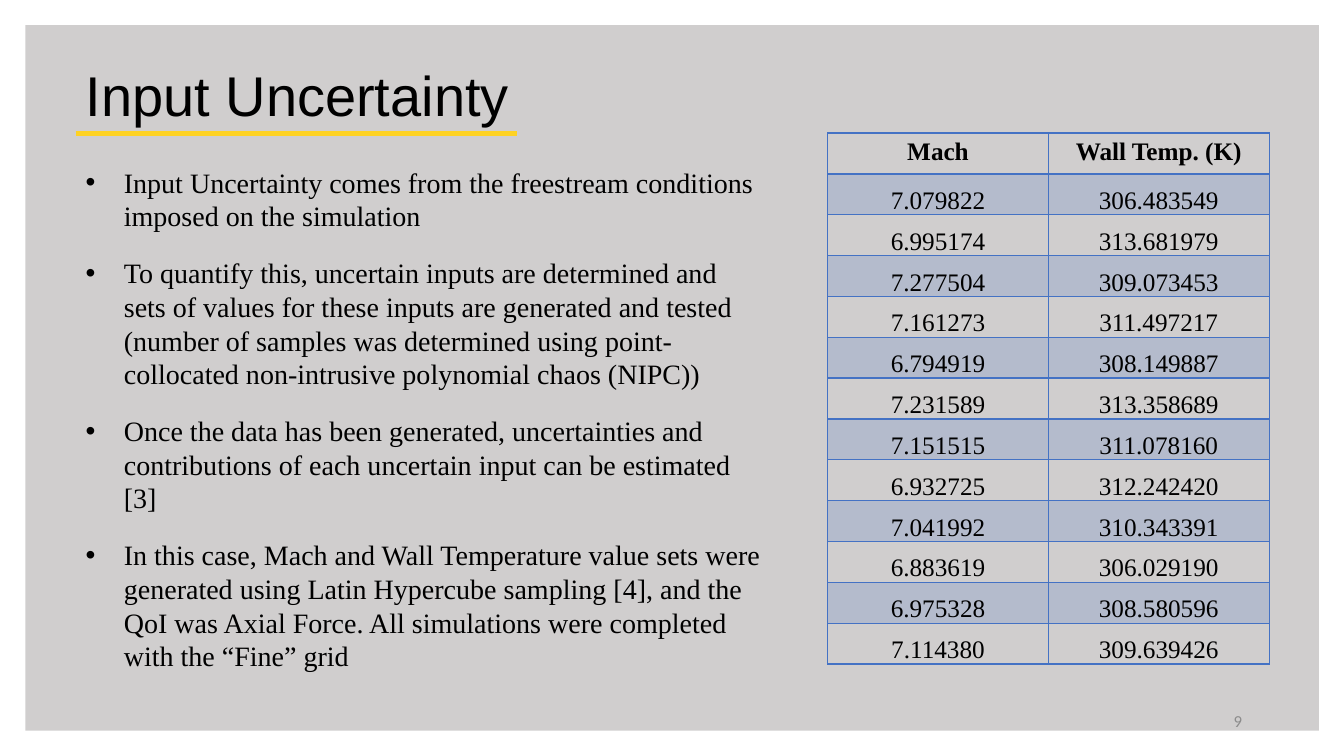
from dataclasses import dataclass

from lxml.etree import SubElement
from pptx import Presentation
from pptx.dml.color import RGBColor
from pptx.enum.shapes import MSO_CONNECTOR, MSO_SHAPE
from pptx.enum.text import MSO_ANCHOR, PP_ALIGN
from pptx.oxml import parse_xml
from pptx.oxml.ns import nsdecls, qn
from pptx.util import Inches, Pt

SLIDE_W, SLIDE_H = Inches(13.33), Inches(7.5)


@dataclass(frozen=True)
class Theme:
    panel: str = "D0CECE"
    ink: str = "000000"
    rule: str = "FED223"
    accent: str = "4472C4"
    muted: str = "8C8C8C"
    title_font: str = "Arial"
    body_font: str = "Times New Roman"
    number_font: str = "Calibri"
    title_size: int = 40
    body_size: int = 20
    table_size: int = 18
    number_size: int = 12


THEME = Theme()

BULLETS = [
    "Input Uncertainty comes from the freestream conditions imposed on the simulation",
    "To quantify this, uncertain inputs are determined and sets of values for these "
    "inputs are generated and tested (number of samples was determined using "
    "point-collocated non-intrusive polynomial chaos (NIPC))",
    "Once the data has been generated, uncertainties and contributions of each "
    "uncertain input can be estimated [3]",
    "In this case, Mach and Wall Temperature value sets were generated using Latin "
    "Hypercube sampling [4], and the QoI was Axial Force. All simulations were "
    "completed with the “Fine” grid",
]

HEADER = ("Mach", "Wall Temp. (K)")
SAMPLES = [
    ("7.079822", "306.483549"),
    ("6.995174", "313.681979"),
    ("7.277504", "309.073453"),
    ("7.161273", "311.497217"),
    ("6.794919", "308.149887"),
    ("7.231589", "313.358689"),
    ("7.151515", "311.078160"),
    ("6.932725", "312.242420"),
    ("7.041992", "310.343391"),
    ("6.883619", "306.029190"),
    ("6.975328", "308.580596"),
    ("7.114380", "309.639426"),
]


def box(x, y, w, h):
    """Turn percentages of the slide into left, top, width and height."""
    return (int(SLIDE_W * x / 100), int(SLIDE_H * y / 100),
            int(SLIDE_W * w / 100), int(SLIDE_H * h / 100))


def style(p, font, size, color, align=PP_ALIGN.LEFT, bold=False):
    p.alignment = align
    p.font.name, p.font.size, p.font.bold = font, Pt(size), bold
    p.font.color.rgb = RGBColor.from_string(color)


def add_panel(slide, area):
    sp = slide.shapes.add_shape(MSO_SHAPE.RECTANGLE, *area)
    sp.shadow.inherit = False
    sp.fill.solid()
    sp.fill.fore_color.rgb = RGBColor.from_string(THEME.panel)
    sp.line.fill.background()
    # Send behind the title placeholder
    slide.shapes._spTree.insert(2, sp._element)


def add_title(slide, area, text, rule_width, rule_drop):
    title = slide.shapes.title
    title.left, title.top, title.width, title.height = area
    tf = title.text_frame
    tf.text = text
    tf.vertical_anchor = MSO_ANCHOR.MIDDLE
    p = tf.paragraphs[0]
    p.line_spacing = 0.9
    style(p, THEME.title_font, THEME.title_size, THEME.ink)

    # Yellow underline
    left, top, width, height = area
    y = top + int(height * rule_drop)
    line = slide.shapes.add_connector(
        MSO_CONNECTOR.STRAIGHT, left, y, left + int(width * rule_width), y)
    line.line.color.rgb = RGBColor.from_string(THEME.rule)
    line.line.width = Pt(3.25)
    SubElement(line._element.spPr, qn("a:effectLst"))


def add_bullets(slide, area, items):
    tf = slide.shapes.add_textbox(*area).text_frame
    tf.word_wrap = True
    indent = Inches(0.38)
    for i, item in enumerate(items):
        p = tf.paragraphs[0] if i == 0 else tf.add_paragraph()
        p.text = item
        style(p, THEME.body_font, THEME.body_size, THEME.ink)
        p.line_spacing = Pt(24)
        p.space_before = Pt(16.7 if i else 0)
        pPr = p._p.get_or_add_pPr()
        pPr.set("marL", str(indent))
        pPr.set("indent", str(-indent))
        bullet_font = parse_xml(f'<a:buFont {nsdecls("a")} typeface="Arial"/>')
        bullet = parse_xml(f'<a:buChar {nsdecls("a")} char="•"/>')
        pPr.insert_element_before(bullet_font, "a:defRPr")
        pPr.insert_element_before(bullet, "a:defRPr")


def set_borders(cell, top=1, bottom=1):
    tcPr = cell._tc.get_or_add_tcPr()
    widths = {"lnL": 1, "lnR": 1, "lnT": top, "lnB": bottom}
    for i, (side, width) in enumerate(widths.items()):
        tcPr.insert(i, parse_xml(
            f'<a:{side} {nsdecls("a")} w="{Pt(width)}"><a:solidFill>'
            f'<a:srgbClr val="{THEME.accent}"/></a:solidFill></a:{side}>'))


def fill_cell(cell, banded):
    if not banded:
        cell.fill.background()
        return
    cell.fill.solid()
    cell.fill.fore_color.rgb = RGBColor.from_string(THEME.accent)
    color = cell._tc.tcPr.find(".//" + qn("a:srgbClr"))
    SubElement(color, qn("a:alpha")).set("val", "20000")


def add_sample_table(slide, area, header, samples):
    rows = [header, *samples]
    table = slide.shapes.add_table(len(rows), len(header), *area).table
    table.first_row = table.horz_banding = False
    for r, values in enumerate(rows):
        table.rows[r].height = area[3] // len(rows)
        for c, value in enumerate(values):
            cell = table.cell(r, c)
            cell.text = value
            style(cell.text_frame.paragraphs[0], THEME.body_font, THEME.table_size,
                  THEME.ink, PP_ALIGN.CENTER, bold=r == 0)
            if r > 0:
                cell.vertical_anchor = MSO_ANCHOR.BOTTOM
                cell.margin_left = cell.margin_right = cell.margin_top = Inches(0.01)
                cell.margin_bottom = 0
            fill_cell(cell, banded=r % 2 == 1)
            # The rule below the header is heavier
            set_borders(cell, top=2 if r == 1 else 1, bottom=2 if r == 0 else 1)


def add_slide_number(slide, area, number):
    tf = slide.shapes.add_textbox(*area).text_frame
    tf.word_wrap = True
    tf.vertical_anchor = MSO_ANCHOR.MIDDLE
    tf.text = number
    style(tf.paragraphs[0], THEME.number_font, THEME.number_size, THEME.muted,
          PP_ALIGN.RIGHT)


def main():
    prs = Presentation()
    prs.slide_width, prs.slide_height = SLIDE_W, SLIDE_H
    slide = prs.slides.add_slide(prs.slide_layouts.get_by_name("Title Only"))

    add_panel(slide, box(1.88, 3.33, 96.25, 93.33))
    add_title(slide, box(5.63, 3.33, 88.75, 19.33), "Input Uncertainty",
              rule_width=0.37, rule_drop=0.74)
    add_bullets(slide, box(5.63, 21.2, 51.84, 70), BULLETS)
    add_sample_table(slide, box(61.58, 17.6, 32.85, 70.27), HEADER, SAMPLES)
    add_slide_number(slide, box(70.66, 92.67, 22.5, 5.33), "9")

    prs.save("out.pptx")


if __name__ == "__main__":
    main()
